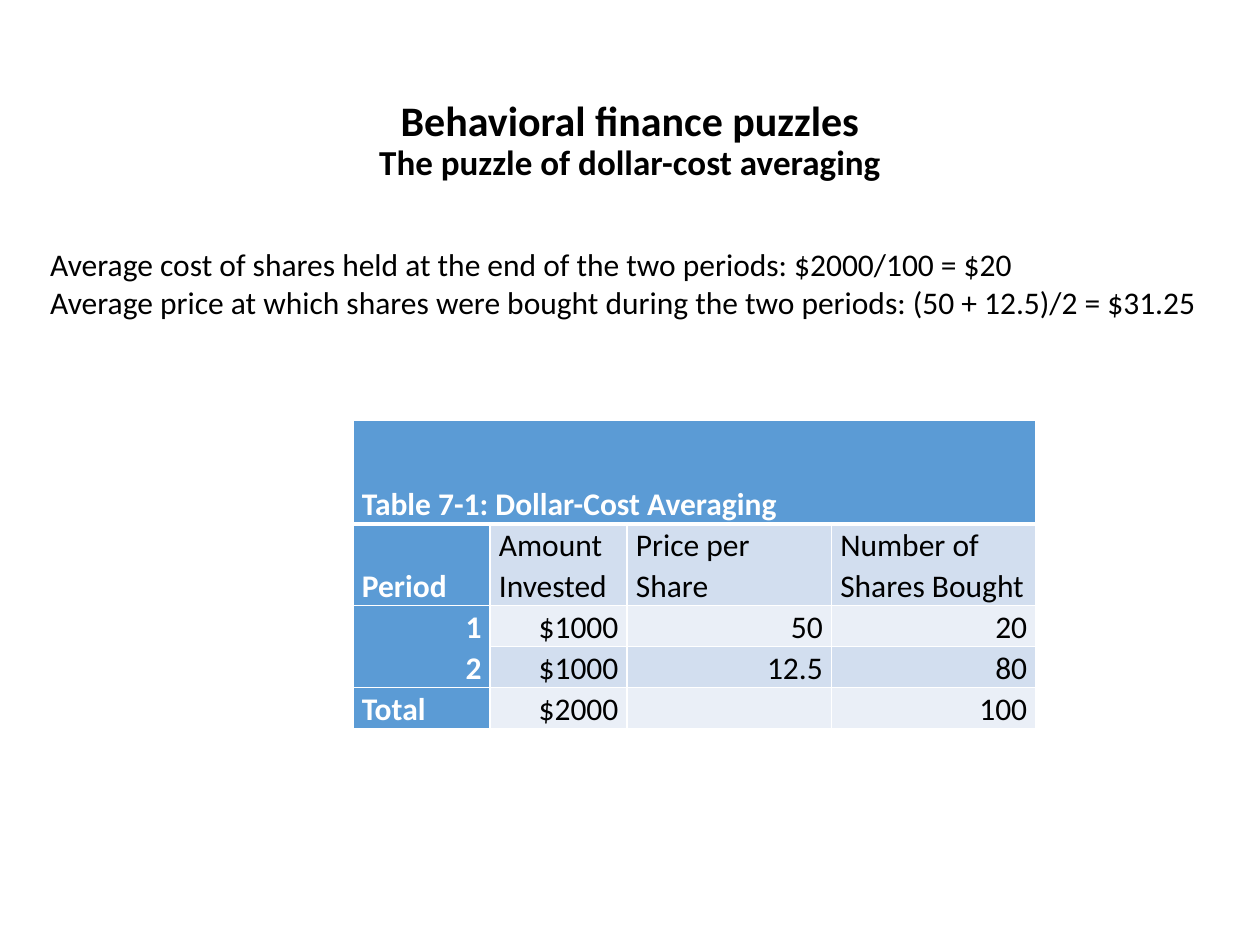
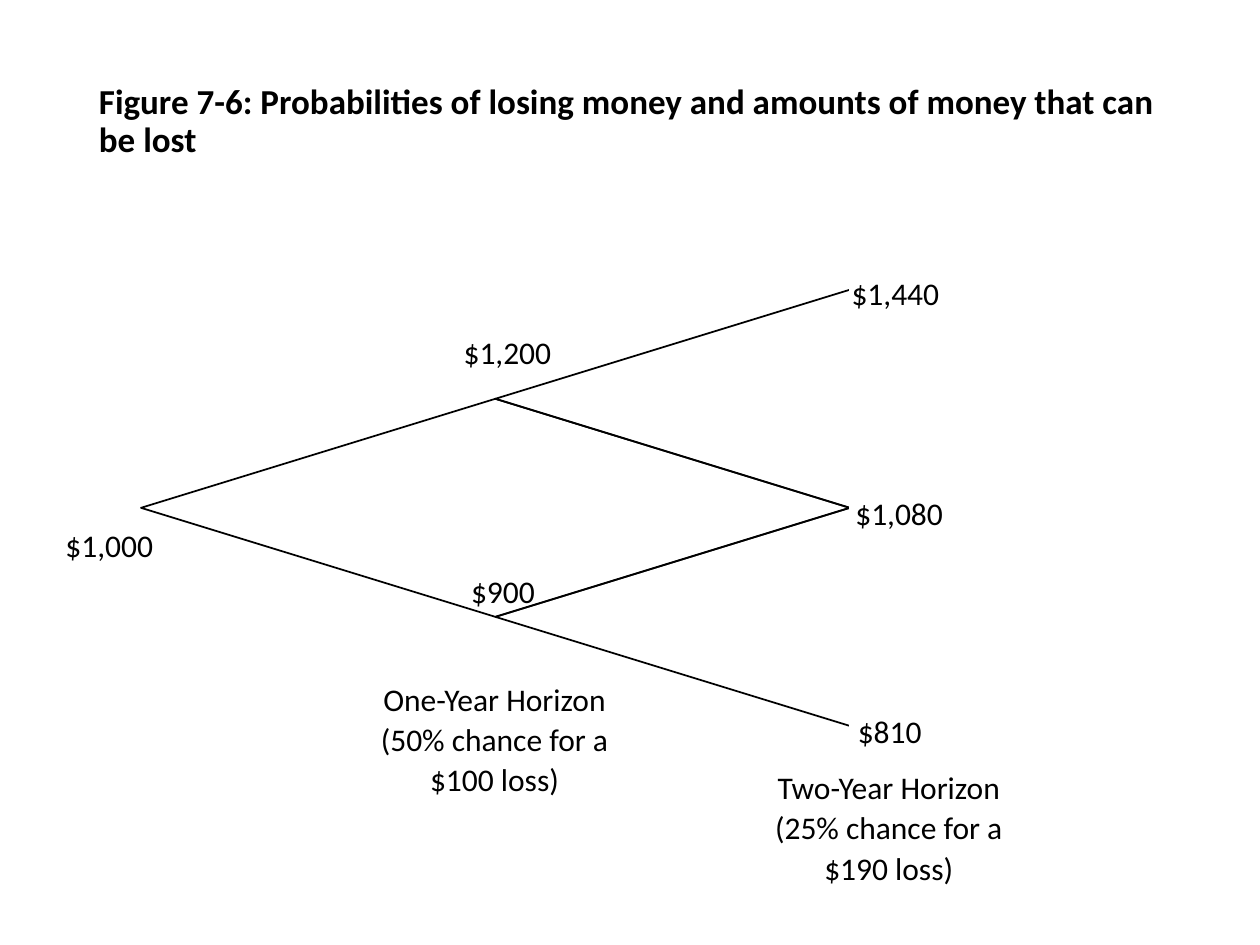
import pptx
import pptx.util
import pptx.dml.color
import pptx.enum.shapes
import pptx.enum.text
import pptx.oxml
import pptx.oxml.ns

Pt = pptx.util.Pt
ALIGN = pptx.enum.text.PP_ALIGN
ANCHOR = pptx.enum.text.MSO_ANCHOR
SHAPE = pptx.enum.shapes.MSO_SHAPE

FONT = "Calibri"
BLACK, WHITE = "000000", "FFFFFF"
HEADER, BANDS = "5B9BD5", ("EAEFF7", "D2DEEF")
TITLE_BOX = (49.5, 28.8, 621, 104.4)
BODY = {"size": 18, "bold": False, "color": BLACK}
STRONG = {"size": 18, "bold": True, "color": WHITE}
TITLE = {"size": 20, "bold": True, "color": BLACK}
TIGHT = {"margin_left": 5, "margin_right": 5, "margin_top": 3, "margin_bottom": 3}


def rgb(value):
    """Turn a hex string into a colour."""
    return pptx.dml.color.RGBColor.from_string(value)


def set_attrs(target, values):
    """Set each attribute named in a dict."""
    for name, value in values.items():
        setattr(target, name, value)


def style_run(r, fmt):
    """Give a run its font, size, weight and colour."""
    set_attrs(r.font, {"name": FONT, "size": Pt(fmt["size"]), "bold": fmt["bold"]})
    r.font.color.rgb = rgb(fmt["color"])


def write(tf, lines, fmt, **para):
    """Write one paragraph per line into a text frame."""
    for i, line in enumerate(lines):
        p = tf.add_paragraph() if i else tf.paragraphs[0]
        set_attrs(p, para)
        r = p.add_run()
        r.text = line
        style_run(r, fmt)


def add_box(s, box, anchor=ANCHOR.TOP, margins=None):
    """Add a wrapping text box and return its text frame."""
    tf = s.shapes.add_textbox(*map(Pt, box)).text_frame
    set_attrs(tf, {"word_wrap": True, "vertical_anchor": anchor})
    set_attrs(tf, {name: Pt(value) for name, value in (margins or {}).items()})
    return tf


def add_title(s, lines, sizes, align, margins=None):
    """Add the slide title, with a line break between its lines."""
    tf = add_box(s, TITLE_BOX, ANCHOR.MIDDLE, margins)
    p = tf.paragraphs[0]
    set_attrs(p, {"alignment": align, "line_spacing": 0.9})
    for i, (line, size) in enumerate(zip(lines, sizes)):
        if i:
            p.add_line_break()
        r = p.add_run()
        r.text = line
        style_run(r, {**TITLE, "size": size})


def add_borders(cell, top, bottom):
    """Draw white borders round a cell, with given top and bottom widths."""
    tc_pr = cell._tc.get_or_add_tcPr()
    for side, width in zip("LRTB", (1, 1, top, bottom)):
        tc_pr.append(pptx.oxml.parse_xml(
            f'<a:ln{side} {pptx.oxml.ns.nsdecls("a")} w="{Pt(width)}"><a:solidFill>'
            f'<a:srgbClr val="{WHITE}"/></a:solidFill></a:ln{side}>'))


def add_cost_table(s, box, rows, widths, heights):
    """Add the dollar-cost table, with a heading row and a heading column."""
    table = s.shapes.add_table(len(rows), len(widths), *map(Pt, box)).table
    for column, width in zip(table.columns, widths):
        column.width = Pt(width)
    for row, height in zip(table.rows, heights):
        row.height = Pt(height)
    for i, row in enumerate(rows):
        for j, text in enumerate(row):
            cell = table.cell(i, j)
            heading = i == 0 or j == 0
            add_borders(cell, 3 if i == 1 else 1, 3 if i == 0 else 1)
            cell.fill.solid()
            cell.fill.fore_color.rgb = rgb(HEADER if heading else BANDS[i % 2])
            set_attrs(cell, {"vertical_anchor": ANCHOR.BOTTOM, "margin_left": Pt(5),
                             "margin_right": Pt(5), "margin_top": 0, "margin_bottom": 0})
            if text:
                numeric = i > 1 and text != "Total"
                write(cell.text_frame, text.split("\n"), STRONG if heading else BODY,
                      alignment=ALIGN.RIGHT if numeric else ALIGN.LEFT, line_spacing=1.07)
    table.cell(0, 0).merge(table.cell(0, len(widths) - 1))
    table.cell(2, 0).merge(table.cell(3, 0))


def add_outline(s, kind, box, line, fill=None):
    """Add a thinly outlined shape."""
    sp = s.shapes.add_shape(kind, *map(Pt, box))
    sp.shadow.inherit = False
    if fill:
        sp.fill.solid()
        sp.fill.fore_color.rgb = rgb(fill)
    else:
        sp.fill.background()
    sp.line.color.rgb = rgb(line)
    sp.line.width = Pt(1)


def add_tree(s, box, amounts, horizons):
    """Add the two-year tree: diamonds trimmed at the second year, then labels."""
    x, y, w, h = box
    step, rise = w / 2, h / 4
    for column, row in ((0, 1), (1, 0), (1, 2)):
        add_outline(s, SHAPE.FLOWCHART_DECISION,
                    (x + column * step, y + row * rise, 2 * step, 2 * rise), BLACK)
    add_outline(s, SHAPE.RECTANGLE, (x + w, y - 27.5, 204.5, h + 75), WHITE, WHITE)
    for text, dx, dy, width in amounts:
        write(add_box(s, (x + dx, y + dy, width, 26.6), margins=TIGHT), [text], BODY,
              line_spacing=1.07, space_after=Pt(6))
    for lines, dx, dy in horizons:
        write(add_box(s, (x + dx, y + dy, 169.2, 60.5), margins=TIGHT), lines, BODY,
              alignment=ALIGN.CENTER, line_spacing=1.07)


def build_averaging(s):
    """Build the dollar-cost averaging slide."""
    add_title(s, ["Behavioral finance puzzles", "The puzzle of dollar-cost averaging"],
              (24, 20), ALIGN.CENTER)
    rows = [
        ["Table 7-1: Dollar-Cost Averaging", "", "", ""],
        ["Period", "Amount Invested", "Price per Share", "Number of Shares Bought"],
        ["1\n2", "$1000", "50", "20"],
        ["", "$1000", "12.5", "80"],
        ["Total", "$2000", "", "100"],
    ]
    add_cost_table(s, (201.8, 240, 390.2, 176.5), rows,
                   (78.3, 78.3, 116.8, 116.8), (59.5, 46.5, 23.5, 23.5, 23.5))
    tf = add_box(s, (21.6, 154.8, 698, 36), ANCHOR.MIDDLE, {"margin_bottom": 25.6})
    write(tf, [
        "Average cost of shares held at the end of the two periods: $2000/100 = $20",
        "Average price at which shares were bought during the two periods: "
        "(50 + 12.5)/2 = $31.25",
    ], BODY)


def build_probabilities(s):
    """Build the slide with the tree of gains and losses."""
    amounts = [
        ("$1,000", -48.2, 130.3, 66.2),
        ("$1,200", 179.3, 20.2, 63.4),
        ("$900", 183.6, 157, 55.4),
        ("$1,440", 401, -13.7, 68.4),
        ("$1,080", 403.2, 112.3, 74.9),
        ("$810", 404.6, 236.9, 55.4),
    ]
    horizons = [
        (["One-Year Horizon", "(50% chance for a $100 loss)"], 117.4, 218.2),
        (["Two-Year Horizon", "(25% chance for a $190 loss)"], 342.7, 268.6),
    ]
    add_tree(s, (80.6, 165.6, 405, 249.2), amounts, horizons)
    add_title(s, ["Figure 7-6: Probabilities of losing money and amounts of money "
                  "that can be lost"], (20,), ALIGN.LEFT, {"margin_bottom": 25.6})


def main():
    """Build both slides and save the deck."""
    prs = pptx.Presentation()
    set_attrs(prs, {"slide_width": Pt(720), "slide_height": Pt(540)})
    for build in (build_averaging, build_probabilities):
        build(prs.slides.add_slide(prs.slide_layouts[6]))
    prs.save("out.pptx")


if __name__ == "__main__":
    main()
